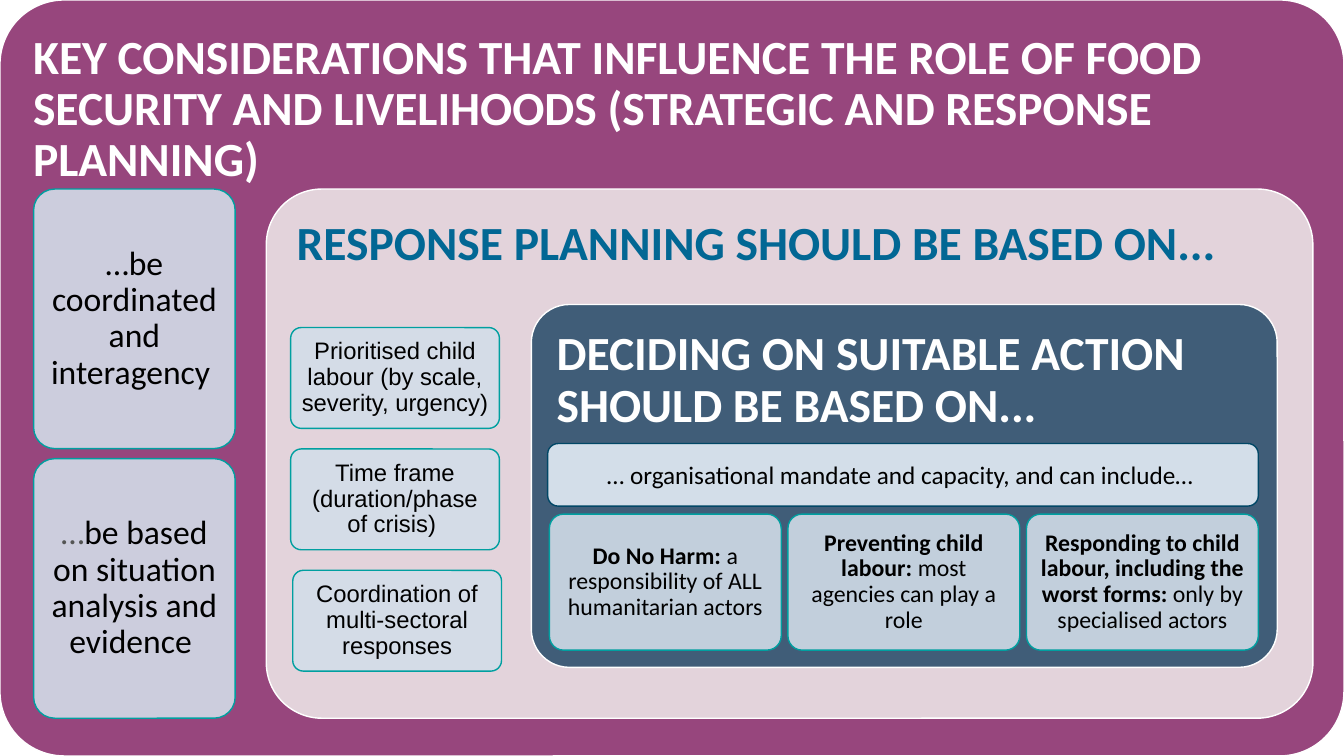
from dataclasses import dataclass

from lxml import etree
from pptx import Presentation
from pptx import util as u
from pptx.dml.color import RGBColor
from pptx.enum import shapes, text
from pptx.oxml.ns import qn

SLIDE_WIDTH, SLIDE_HEIGHT = u.Inches(13.33), u.Inches(7.5)
COLUMNS, ROWS = 160, 90


@dataclass(frozen=True)
class Theme:
    white: str = "FFFFFF"
    black: str = "000000"
    grey: str = "545554"
    purple: str = "97467D"
    pink: str = "E3D3DB"
    navy: str = "405D78"
    dark_blue: str = "014766"
    blue: str = "026794"
    mist: str = "D3DEE9"
    teal: str = "009FA0"
    main_font: str = "Calibri"
    topic_font: str = "Arial"
    heading_size: int = 34
    principle_size: int = 24
    mandate_size: int = 18
    detail_size: int = 17
    spacing: float = 0.9
    corner: float = 0.105
    card_opacity: int = 89


THEME = Theme()


def grid(left, top, width, height):
    """Turn columns and rows into slide lengths."""
    across, down = SLIDE_WIDTH / COLUMNS, SLIDE_HEIGHT / ROWS
    return (round(left * across), round(top * down),
            round(width * across), round(height * down))


def colour(value):
    return RGBColor.from_string(value)


def add_round_box(page, place, fill, line, corner=THEME.corner):
    box = page.shapes.add_shape(shapes.MSO_SHAPE.ROUNDED_RECTANGLE, *grid(*place))
    box.adjustments[0] = corner
    box.shadow.inherit = False
    box.fill.solid()
    box.fill.fore_color.rgb = colour(fill)
    box.line.color.rgb = colour(line)
    box.line.width = u.Pt(1)
    return box


def set_opacity(box, percent):
    fill = box.element.spPr.find(qn("a:solidFill"))
    etree.SubElement(fill[0], qn("a:alpha")).set("val", str(percent * 1000))


def write(box, spans, size, ink, inset, font=THEME.main_font,
          align=text.PP_ALIGN.CENTER, anchor=text.MSO_ANCHOR.MIDDLE,
          spacing=THEME.spacing):
    """Fill a box with one paragraph; each span is (words, font changes)."""
    frame = box.text_frame
    frame.word_wrap = True
    frame.auto_size = text.MSO_AUTO_SIZE.NONE
    frame.vertical_anchor = anchor
    frame.margin_left = frame.margin_right = u.Inches(inset)
    frame.margin_top = frame.margin_bottom = u.Inches(inset)
    para = frame.paragraphs[0]
    para.alignment = align
    para.line_spacing = spacing
    para.space_before = para.space_after = u.Pt(0)
    para.font.name = font
    para.font.size = u.Pt(size)
    para.font.color.rgb = colour(ink)
    for words, changes in spans:
        span = para.add_run()
        span.text = words
        if "bold" in changes:
            span.font.bold = changes["bold"]
        if "ink" in changes:
            span.font.color.rgb = colour(changes["ink"])


def write_heading(box, words, ink):
    write(box, [(words, {"bold": True})], THEME.heading_size, ink, 0.14,
          align=text.PP_ALIGN.LEFT, anchor=text.MSO_ANCHOR.TOP)


def add_panel(page, place, fill, heading, ink):
    panel = add_round_box(page, place, fill, THEME.white)
    write_heading(panel, heading, ink)


def add_card(page, place, spans, size, inset, font=THEME.main_font):
    card = add_round_box(page, place, THEME.mist, THEME.teal)
    set_opacity(card, THEME.card_opacity)
    write(card, spans, size, THEME.black, inset, font)


def add_title_panel(page, words):
    panel = add_round_box(page, (0, 0, COLUMNS, ROWS), THEME.purple,
                          THEME.white, corner=0.085)
    title = page.shapes.title
    title.left, title.top, title.width, title.height = grid(2.25, 2.25, 155.5, 20)
    write_heading(title, words, THEME.white)
    panel.element.addnext(title.element)


def add_principles(page):
    principles = [
        [("…be coordinated and interagency ", {})],
        [("…", {"ink": THEME.grey}),
         ("be based on situation analysis and evidence ", {})],
    ]
    for row, spans in enumerate(principles):
        add_card(page, (4, 22.5 + 32.1 * row, 24, 30.9), spans,
                 THEME.principle_size, 0.1)


def add_topics(page):
    topics = [
        (34.6, "Prioritised child labour (by scale, severity, urgency)"),
        (34.6, "Time frame (duration/phase of crisis) "),
        (34.85, "Coordination of multi-sectoral responses"),
    ]
    for row, (left, words) in enumerate(topics):
        add_card(page, (left, 39 + 14.45 * row, 24.85, 12), [(words, {})],
                 THEME.detail_size, 0.07, THEME.topic_font)


def add_actions(page):
    actions = [
        ("Do No Harm: ", "a responsibility of ALL humanitarian actors"),
        ("Preventing child labour: ", "most agencies can play a role"),
        ("Responding to child labour, including the worst forms: ",
         "only by specialised actors"),
    ]
    for column, (name, scope) in enumerate(actions):
        add_card(page, (65.4 + 28.4 * column, 61.2, 27.6, 16.2),
                 [(name, {"bold": True}), (scope, {})], THEME.detail_size, 0.07)


def add_mandate(page):
    bar = add_round_box(page, (65.2, 52.8, 84.6, 7.45), THEME.mist,
                        THEME.dark_blue, corner=0.167)
    write(bar, [("… organisational mandate and capacity, and can include… ", {})],
          THEME.mandate_size, THEME.black, 0.05, spacing=1.0)


def main():
    deck = Presentation()
    deck.slide_width, deck.slide_height = SLIDE_WIDTH, SLIDE_HEIGHT
    page = deck.slides.add_slide(deck.slide_layouts.get_by_name("Title Only"))
    add_title_panel(page, "KEY CONSIDERATIONS THAT INFLUENCE THE ROLE OF FOOD "
                          "SECURITY AND LIVELIHOODS (STRATEGIC AND RESPONSE PLANNING)")
    add_principles(page)
    add_panel(page, (31.7, 22.5, 124.6, 63), THEME.pink,
              "RESPONSE PLANNING SHOULD BE BASED ON...", THEME.blue)
    add_topics(page)
    add_panel(page, (63.25, 36.25, 88.8, 43.2), THEME.navy,
              "DECIDING ON SUITABLE ACTION SHOULD BE BASED ON...", THEME.white)
    add_actions(page)
    add_mandate(page)
    deck.save("out.pptx")


if __name__ == "__main__":
    main()
